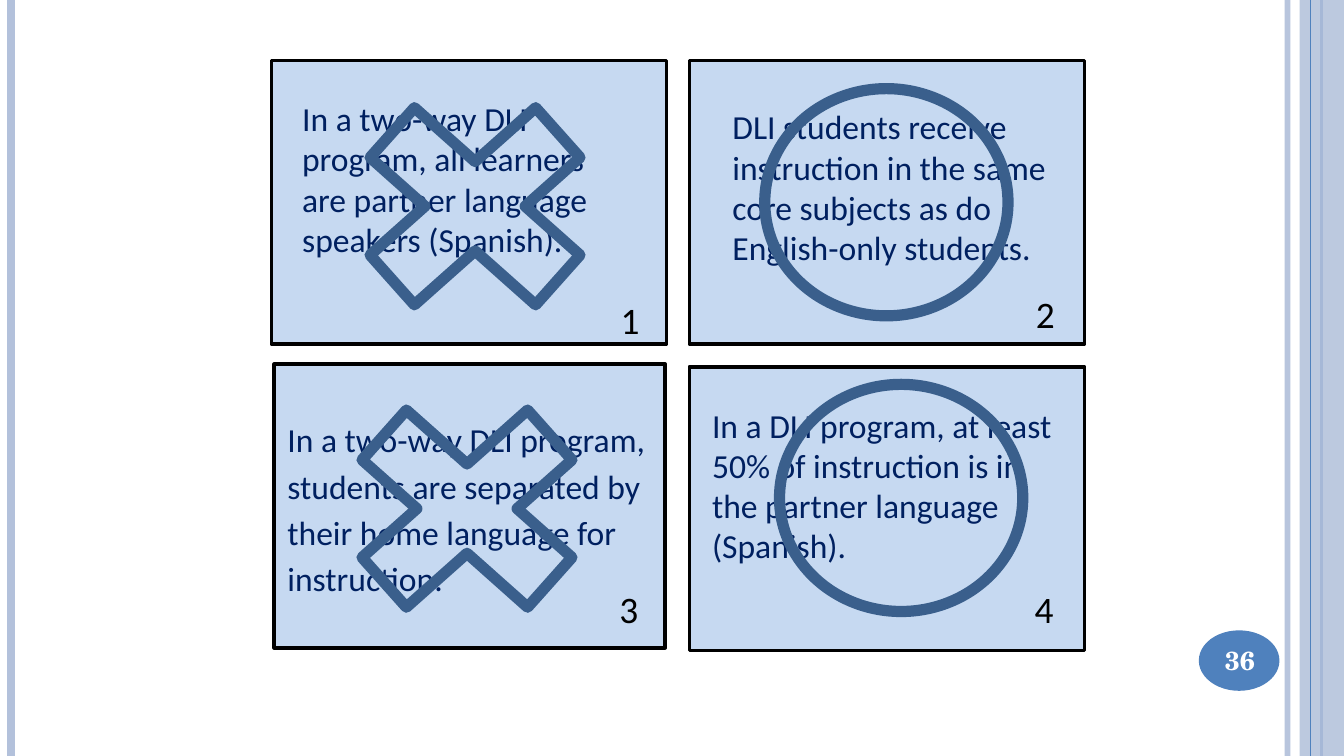
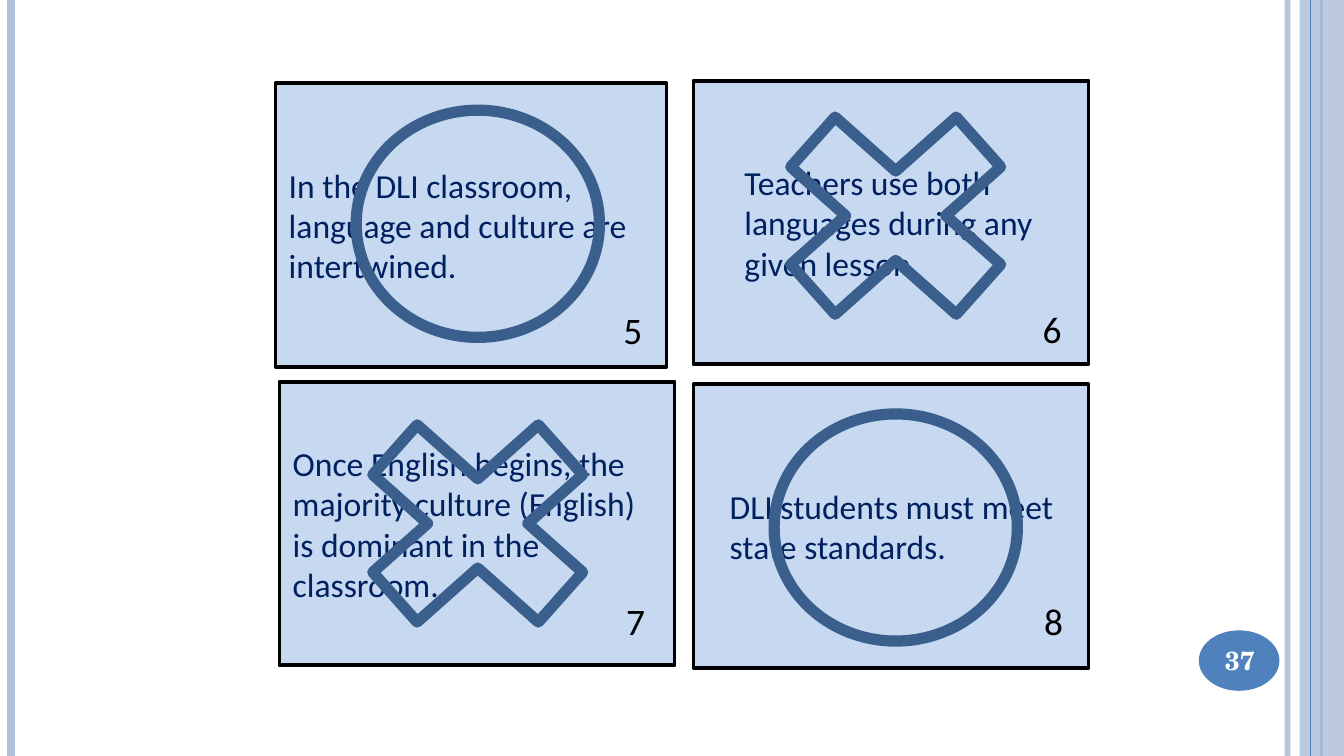
from dataclasses import dataclass
from typing import Optional

from lxml import etree
from pptx import Presentation
from pptx.dml.color import RGBColor
from pptx.enum.shapes import MSO_CONNECTOR, MSO_SHAPE
from pptx.enum.text import MSO_ANCHOR, PP_ALIGN
from pptx.oxml.ns import qn
from pptx.util import Inches, Pt

RECT, OVAL, CROSS = MSO_SHAPE.RECTANGLE, MSO_SHAPE.OVAL, MSO_SHAPE.MATH_MULTIPLY
STRAIGHT = MSO_CONNECTOR.STRAIGHT
TOP, MIDDLE = MSO_ANCHOR.TOP, MSO_ANCHOR.MIDDLE
LEFT, CENTER = PP_ALIGN.LEFT, PP_ALIGN.CENTER

WIDTH = 10
HEIGHT = WIDTH * 9 / 16
BODY_FONT, BADGE_FONT = "Calibri", "TeX Gyre Schola"
COLORS = {
    "band": "B3C1DB",
    "accent": "4F81BD",
    "card": "C6D9F1",
    "mark": "3A5F8C",
    "statement": "002060",
    "black": "000000",
    "white": "FFFFFF",
}
MARK_SIZES = {CROSS: (2.37, 2.11), OVAL: (1.81, 1.69)}
NUMBER_SIZE = (0.4, 0.44)


@dataclass
class Card:
    number: int
    box: tuple
    text: str
    mark: int
    mark_at: tuple
    number_at: tuple
    text_box: Optional[tuple] = None  # separate box for the statement
    indent: float = 0.1
    bottom: float = 0.05
    spacing: float = 1.0


SLIDES = {
    36: [
        Card(3, (2.04, 2.71, 2.91, 2.11),
             "In a two-way DLI program, students are separated by their home "
             "language for instruction.",
             CROSS, (2.29, 2.73), (4.51, 4.31), spacing=1.15),
        Card(1, (2.02, 0.45, 2.94, 2.11),
             "In a two-way DLI program, all learners are partner language "
             "speakers (Spanish).",
             CROSS, (2.35, 0.48), (4.52, 2.16), text_box=(2.15, 0.68, 2.66, 1.55)),
        Card(2, (5.13, 0.45, 2.94, 2.11),
             "DLI students receive\ninstruction in the same\n"
             "core subjects as do\nEnglish-only students.",
             OVAL, (5.69, 0.66), (7.61, 2.12), indent=0.32, bottom=0.28),
        Card(4, (5.13, 2.73, 2.94, 2.11),
             "In a DLI program, at least\n50% of instruction is in the partner "
             "language (Spanish).",
             OVAL, (5.8, 2.86), (7.6, 4.31), text_box=(5.2, 2.96, 2.8, 1.31)),
    ],
    37: [
        Card(6, (5.16, 0.6, 2.94, 2.11),
             "Teachers use both\nlanguages during any\ngiven lesson.",
             CROSS, (5.48, 0.55), (7.66, 2.23), indent=0.38),
        Card(7, (2.08, 2.84, 2.94, 2.11),
             "Once English begins, the majority culture (English) is dominant "
             "in the classroom.",
             CROSS, (2.37, 2.84), (4.56, 4.4)),
        Card(5, (2.05, 0.62, 2.91, 2.11),
             "In the DLI classroom, language and culture are intertwined.",
             OVAL, (2.65, 0.82), (4.54, 2.24)),
        Card(8, (5.16, 2.86, 2.94, 2.11),
             "DLI students must meet\nstate standards.",
             OVAL, (5.76, 3.08), (7.67, 4.4), indent=0.27),
    ],
}


def rgb(name):
    return RGBColor.from_string(COLORS[name])


def set_alpha(element, percent):
    color = element.find(".//" + qn("a:srgbClr"))
    etree.SubElement(color, qn("a:alpha"), val=str(percent * 1000))


def add_rule(s, x, color, width, alpha=None):
    """Full-height vertical line."""
    line = s.shapes.add_connector(
        STRAIGHT, Inches(x), Inches(0), Inches(x), Inches(HEIGHT))
    line.line.color.rgb = rgb(color)
    line.line.width = Pt(width)
    sp_pr = line._element.spPr
    if alpha:
        set_alpha(sp_pr, alpha)
    etree.SubElement(sp_pr, qn("a:effectLst"))


def add_box(s, kind, box, fill=None, line=None, width=0):
    sp = s.shapes.add_shape(kind, *map(Inches, box))
    sp.shadow.inherit = False
    if fill:
        sp.fill.solid()
        sp.fill.fore_color.rgb = rgb(fill)
    else:
        sp.fill.background()
    if line:
        sp.line.color.rgb = rgb(line)
        sp.line.width = Pt(width)
    else:
        sp.line.fill.background()
    return sp


def write(sp, text, size, color, font=BODY_FONT, bold=False, align=LEFT,
          anchor=TOP, spacing=1.0):
    tf = sp.text_frame
    tf.word_wrap = True
    tf.vertical_anchor = anchor
    p = tf.paragraphs[0]
    p.text = text
    p.alignment = align
    p.line_spacing = spacing
    for r in p.runs:
        r.font.name = font
        r.font.size = Pt(size)
        r.font.bold = bold
        r.font.color.rgb = rgb(color)


def add_text(s, box, text, size, color, **style):
    sp = s.shapes.add_textbox(*map(Inches, box))
    write(sp, text, size, color, **style)


def add_frame(s, page):
    """Side rules, right band and page badge."""
    add_rule(s, 9.58, "band", 3, alpha=93)
    add_rule(s, 0.08, "band", 4.5)
    add_rule(s, 9.83, "accent", 1.5)
    band = add_box(s, RECT, (9.67, 0, 0.33, HEIGHT), fill="band")
    set_alpha(band._element.spPr, 87)
    add_rule(s, 9.75, "accent", 0.75)
    add_box(s, OVAL, (8.92, 4.69, 0.6, 0.45), fill="accent")
    add_text(s, (8.89, 4.7, 0.67, 0.43), str(page), 14, "white",
             font=BADGE_FONT, bold=True, align=CENTER, anchor=MIDDLE)


def add_card(s, card):
    sp = add_box(s, RECT, card.box, fill="card", line="black", width=2)
    if card.text_box:
        add_text(s, card.text_box, card.text, 18, "statement")
    else:
        write(sp, card.text, 18, "statement", anchor=MIDDLE, spacing=card.spacing)
        sp.text_frame.margin_left = Inches(card.indent)
        sp.text_frame.margin_bottom = Inches(card.bottom)
    add_text(s, card.number_at + NUMBER_SIZE, str(card.number), 20, "black")
    # True statements are circled, false ones crossed out
    add_box(s, card.mark, card.mark_at + MARK_SIZES[card.mark], line="mark", width=6)


def main():
    prs = Presentation()
    prs.slide_width, prs.slide_height = Inches(WIDTH), Inches(HEIGHT)
    for page, cards in SLIDES.items():
        s = prs.slides.add_slide(prs.slide_layouts[6])
        add_frame(s, page)
        for card in cards:
            add_card(s, card)
    prs.save("out.pptx")


if __name__ == "__main__":
    main()
